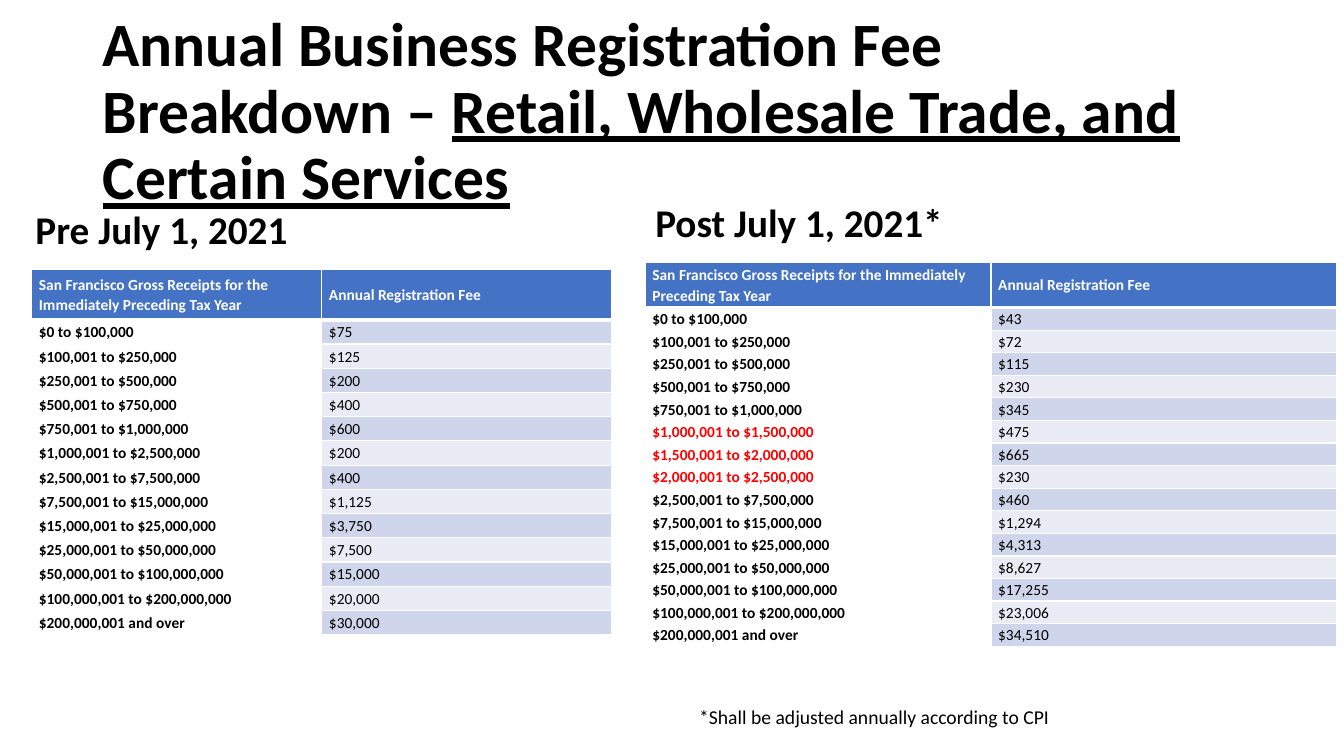
from lxml.etree import SubElement
from pptx import Presentation
from pptx.dml.color import RGBColor
from pptx.enum.text import MSO_ANCHOR as Anchor, MSO_AUTO_SIZE as AutoSize, PP_ALIGN as Align
from pptx.oxml.ns import qn
from pptx.util import Cm, Pt

FONT = "Calibri"
BLACK = RGBColor(0x00, 0x00, 0x00)
WHITE = RGBColor(0xFF, 0xFF, 0xFF)
RED = RGBColor(0xFF, 0x00, 0x00)
HEADER_BLUE = RGBColor(0x44, 0x72, 0xC4)
BANDS = RGBColor(0xCF, 0xD5, 0xEA), RGBColor(0xE9, 0xEB, 0xF5)

HEADER = ("San Francisco Gross Receipts for the Immediately Preceding Tax Year",
          "Annual Registration Fee")

PRE_FEES = [
    ("$0 to $100,000", "$75"),
    ("$100,001 to $250,000", "$125"),
    ("$250,001 to $500,000", "$200"),
    ("$500,001 to $750,000", "$400"),
    ("$750,001 to $1,000,000", "$600"),
    ("$1,000,001 to $2,500,000", "$200"),
    ("$2,500,001 to $7,500,000", "$400"),
    ("$7,500,001 to $15,000,000", "$1,125"),
    ("$15,000,001 to $25,000,000", "$3,750"),
    ("$25,000,001 to $50,000,000", "$7,500"),
    ("$50,000,001 to $100,000,000", "$15,000"),
    ("$100,000,001 to $200,000,000", "$20,000"),
    ("$200,000,001 and over", "$30,000"),
]
POST_FEES = [
    ("$0 to $100,000", "$43"),
    ("$100,001 to $250,000", "$72"),
    ("$250,001 to $500,000", "$115"),
    ("$500,001 to $750,000", "$230"),
    ("$750,001 to $1,000,000", "$345"),
    ("$1,000,001 to $1,500,000", "$475"),
    ("$1,500,001 to $2,000,000", "$665"),
    ("$2,000,001 to $2,500,000", "$230"),
    ("$2,500,001 to $7,500,000", "$460"),
    ("$7,500,001 to $15,000,000", "$1,294"),
    ("$15,000,001 to $25,000,000", "$4,313"),
    ("$25,000,001 to $50,000,000", "$8,627"),
    ("$50,000,001 to $100,000,000", "$17,255"),
    ("$100,000,001 to $200,000,000", "$23,006"),
    ("$200,000,001 and over", "$34,510"),
]
NEW_BRACKETS = {"$1,000,001 to $1,500,000", "$1,500,001 to $2,000,000",
                "$2,000,001 to $2,500,000"}


def place(shape, left, top, width, height):
    shape.left, shape.top, shape.width, shape.height = left, top, width, height


def style_runs(paragraph, size, color=BLACK, bold=False):
    for run in paragraph.runs:
        run.font.name = FONT
        run.font.size = Pt(size)
        run.font.bold = bold
        run.font.color.rgb = color


def add_title(slide, left, top, width, height):
    title = slide.shapes.title
    place(title, left, top, width, height)
    frame = title.text_frame
    frame.auto_size = AutoSize.NONE
    frame.vertical_anchor = Anchor.MIDDLE
    heading = frame.paragraphs[0]
    heading.text = "Annual Business Registration Fee Breakdown – "
    sectors = heading.add_run()
    sectors.text = "Retail, Wholesale Trade, and Certain Services"
    sectors.font.underline = True
    heading.alignment = Align.LEFT
    heading.line_spacing = 0.9
    style_runs(heading, 44, bold=True)


def add_period(period, text, left, top, width, height):
    place(period, left, top, width, height)
    frame = period.text_frame
    frame.text = text
    frame.auto_size = AutoSize.NONE
    frame.vertical_anchor = Anchor.TOP
    label = frame.paragraphs[0]
    label.line_spacing = 0.9
    label.space_before = Pt(10)
    style_runs(label, 28, bold=True)


def add_borders(cell, top_width, bottom_width):
    properties = cell._tc.get_or_add_tcPr()
    sides = {"a:lnL": 1, "a:lnR": 1, "a:lnT": top_width, "a:lnB": bottom_width}
    for side, width in sides.items():
        line = SubElement(properties, qn(side), w=str(Pt(width)))
        fill = SubElement(line, qn("a:solidFill"))
        SubElement(fill, qn("a:srgbClr"), val=str(WHITE))


def fill_cell(cell, text, fill, color, bold):
    cell.fill.solid()
    cell.fill.fore_color.rgb = fill
    cell.vertical_anchor = Anchor.MIDDLE
    cell.margin_left = cell.margin_right = Cm(0.18)
    cell.margin_top = cell.margin_bottom = 0
    cell.text = text
    entry = cell.text_frame.paragraphs[0]
    entry.line_spacing = 1.07
    entry.space_after = Pt(8)
    style_runs(entry, 11, color, bold)


def add_fee_table(slide, fees, left, top, width, header_height, row_height):
    rows = [HEADER] + fees
    height = header_height + row_height * len(fees)
    table = slide.shapes.add_table(len(rows), 2, left, top, width, height).table
    for column in table.columns:
        column.width = width // 2
    for index, (bracket, fee) in enumerate(rows):
        is_header = index == 0
        table.rows[index].height = header_height if is_header else row_height
        bracket_cell, fee_cell = table.cell(index, 0), table.cell(index, 1)
        for cell in (bracket_cell, fee_cell):
            add_borders(cell, 3 if index == 1 else 1, 3 if is_header else 1)
        if is_header:
            fill_cell(bracket_cell, bracket, HEADER_BLUE, WHITE, True)
            fill_cell(fee_cell, fee, HEADER_BLUE, WHITE, True)
        else:
            color = RED if bracket in NEW_BRACKETS else BLACK
            fill_cell(bracket_cell, bracket, WHITE, color, True)
            fill_cell(fee_cell, fee, BANDS[(index - 1) % 2], BLACK, False)


def add_footnote(slide, left, top, width, height):
    frame = slide.shapes.add_textbox(left, top, width, height).text_frame
    frame.text = "*Shall be adjusted annually according to CPI"
    frame.word_wrap = False
    frame.auto_size = AutoSize.SHAPE_TO_FIT_TEXT
    style_runs(frame.paragraphs[0], 14)


def main():
    deck = Presentation()
    deck.slide_width, deck.slide_height = Cm(33.87), Cm(19.05)

    # Comparison layout, with its two content placeholders taken out
    slide = deck.slides.add_slide(deck.slide_layouts[4])
    _, pre_period, pre_content, post_period, post_content = slide.placeholders
    for content in (pre_content, post_content):
        content.element.getparent().remove(content.element)

    add_title(slide, Cm(2.33), Cm(1.01), Cm(29.21), Cm(3.68))

    # Fees before the change
    add_period(pre_period, "Pre July 1, 2021", Cm(0.64), Cm(5.18), Cm(9.27), Cm(3.05))
    add_fee_table(slide, PRE_FEES, Cm(0.8), Cm(6.78), Cm(14.62), Cm(1.28), Cm(0.61))

    # Fees after the change
    add_period(post_period, "Post July 1, 2021*", Cm(16.26), Cm(5), Cm(10.64), Cm(2.64))
    add_fee_table(slide, POST_FEES, Cm(16.26), Cm(6.61), Cm(17.43), Cm(1.14), Cm(0.57))

    add_footnote(slide, Cm(17.37), Cm(17.63), Cm(9.42), Cm(0.86))
    deck.save("out.pptx")


if __name__ == "__main__":
    main()
